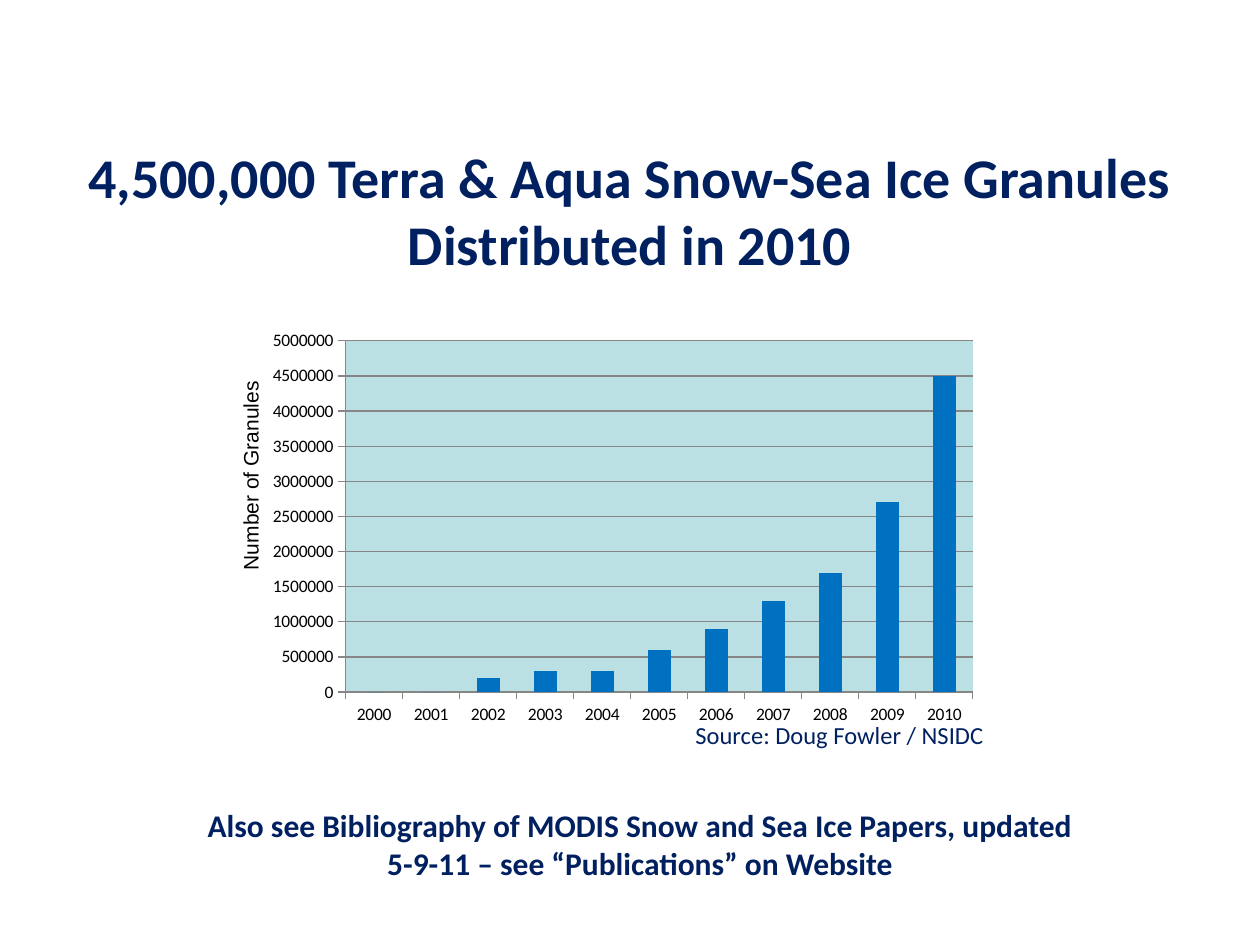
from dataclasses import dataclass

from lxml import etree
from pptx import Presentation
from pptx.chart.data import CategoryChartData
from pptx.dml.color import RGBColor
from pptx.enum.chart import XL_CHART_TYPE, XL_TICK_MARK
from pptx.enum.text import MSO_ANCHOR, PP_ALIGN
from pptx.oxml import parse_xml
from pptx.oxml.ns import nsdecls, qn
from pptx.util import Cm, Pt

COLUMNS = XL_CHART_TYPE.COLUMN_CLUSTERED
OUTSIDE = XL_TICK_MARK.OUTSIDE
TOP, MIDDLE = MSO_ANCHOR.TOP, MSO_ANCHOR.MIDDLE
LEFT, CENTER = PP_ALIGN.LEFT, PP_ALIGN.CENTER


@dataclass(frozen=True)
class Theme:
    navy: str = "002060"
    black: str = "000000"
    bar: str = "0070C0"
    plot: str = "BBE0E3"
    grid: str = "868686"
    font: str = "Calibri"
    axis_font: str = "Arial"
    title: int = 32
    note: int = 18
    source: int = 14
    axis_title: int = 12
    tick: int = 10


@dataclass(frozen=True)
class Label:
    lines: tuple[str, ...]
    left: float
    top: float
    width: float
    height: float
    size: int
    color: str
    font: str
    bold: bool = False
    align: PP_ALIGN = LEFT
    anchor: MSO_ANCHOR = TOP
    rotation: int = 0


THEME = Theme()

LABELS = (
    Label(("4,500,000 Terra & Aqua Snow-Sea Ice Granules Distributed in 2010",),
          0.42, 2.72, 24.56, 3, THEME.title, THEME.navy, THEME.font,
          bold=True, align=CENTER, anchor=MIDDLE),
    Label(("Number of Granules",), 2.77, 9.09, 4.55, 0.76,
          THEME.axis_title, THEME.black, THEME.axis_font, rotation=270),
    Label(("Source: Doug Fowler / NSIDC",), 13.77, 14.4, 6.35, 0.86,
          THEME.source, THEME.navy, THEME.font),
    Label(("Also see Bibliography of MODIS Snow and Sea Ice Papers, updated",
           "5-9-11 – see “Publications” on Website"),
          3.38, 16.13, 19.05, 1.8, THEME.note, THEME.navy, THEME.font,
          bold=True, align=CENTER),
)

FIRST_YEAR = 2000
GRANULES = (0, 0, 200000, 300000, 300000, 600000, 900000,
            1300000, 1700000, 2700000, 4500000)
PLOT_LAYOUT = {"x": 0.1, "y": 0.04, "w": 0.88, "h": 0.88}


def rgb(color: str) -> RGBColor:
    return RGBColor.from_string(color)


def add_label(s, label: Label) -> None:
    box = s.shapes.add_textbox(Cm(label.left), Cm(label.top),
                               Cm(label.width), Cm(label.height))
    box.rotation = label.rotation
    tf = box.text_frame
    tf.word_wrap = True
    tf.vertical_anchor = label.anchor
    p = tf.paragraphs[0]
    p.alignment = label.align
    for i, line in enumerate(label.lines):
        if i:
            p.add_line_break()
        r = p.add_run()
        r.text = line
        r.font.name = label.font
        r.font.size = Pt(label.size)
        r.font.bold = label.bold
        r.font.color.rgb = rgb(label.color)


def style_plot(chart) -> None:
    area = chart.plots[0]._element.getparent()
    for old in area.findall(qn("c:layout")):
        area.remove(old)
    layout = parse_xml(f"<c:layout {nsdecls('c')}><c:manualLayout/></c:layout>")
    settings = {"layoutTarget": "inner", "xMode": "edge", "yMode": "edge",
                **PLOT_LAYOUT}
    for name, value in settings.items():
        etree.SubElement(layout[0], qn(f"c:{name}")).set("val", str(value))
    area.insert(0, layout)
    area.append(parse_xml(
        f"<c:spPr {nsdecls('c', 'a')}><a:solidFill>"
        f'<a:srgbClr val="{THEME.plot}"/></a:solidFill></c:spPr>'))


def add_granule_chart(s) -> None:
    data = CategoryChartData()
    data.categories = [str(FIRST_YEAR + i) for i in range(len(GRANULES))]
    data.add_series("Series 1", GRANULES)
    chart = s.shapes.add_chart(COLUMNS, Cm(5.5), Cm(6.55),
                               Cm(14.4), Cm(8.05), data).chart
    chart.has_legend = False
    chart.has_title = False
    chart.font.name = THEME.font
    chart.font.size = Pt(THEME.tick)
    chart.font.color.rgb = rgb(THEME.black)

    plot = chart.plots[0]
    plot.gap_width = 150
    plot.vary_by_categories = False
    fill = plot.series[0].format.fill
    fill.solid()
    fill.fore_color.rgb = rgb(THEME.bar)

    values = chart.value_axis
    values.minimum_scale = 0
    values.maximum_scale = 5000000
    values.major_unit = 500000
    values.has_major_gridlines = True
    values.tick_labels.number_format = "0"
    values.tick_labels.number_format_is_linked = False
    for axis in (chart.category_axis, values):
        axis.major_tick_mark = OUTSIDE
    for part in (chart.category_axis, values, values.major_gridlines):
        part.format.line.color.rgb = rgb(THEME.grid)
        part.format.line.width = Pt(0.75)
    style_plot(chart)


def main() -> None:
    prs = Presentation()
    prs.slide_width, prs.slide_height = Cm(25.4), Cm(19.05)
    s = prs.slides.add_slide(prs.slide_layouts[6])
    add_granule_chart(s)
    for label in LABELS:
        add_label(s, label)
    prs.save("out.pptx")


if __name__ == "__main__":
    main()
